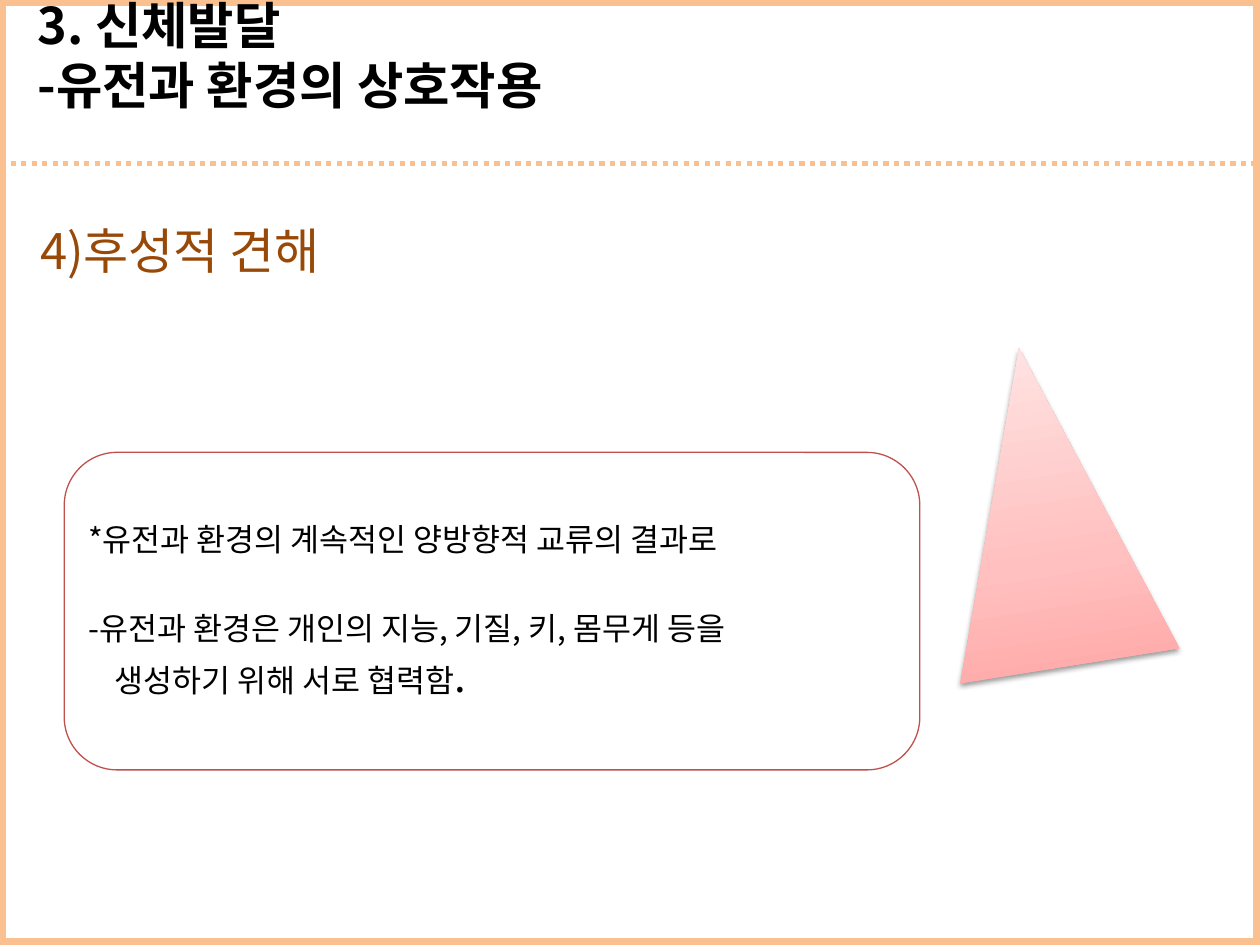
from copy import deepcopy
from dataclasses import dataclass

from lxml import etree
from pptx import Presentation
from pptx.dml.color import RGBColor
from pptx.enum.dml import MSO_LINE
from pptx.enum.shapes import MSO_CONNECTOR, MSO_SHAPE
from pptx.enum.text import MSO_ANCHOR, PP_ALIGN
from pptx.oxml.ns import qn
from pptx.util import Inches, Pt

FRAME = MSO_SHAPE.FRAME
ROUND = MSO_SHAPE.ROUNDED_RECTANGLE
CONE = MSO_SHAPE.ISOSCELES_TRIANGLE
STRAIGHT = MSO_CONNECTOR.STRAIGHT
DOTS = MSO_LINE.ROUND_DOT
TOP, MIDDLE = MSO_ANCHOR.TOP, MSO_ANCHOR.MIDDLE
LEFT, JUSTIFY = PP_ALIGN.LEFT, PP_ALIGN.JUSTIFY


@dataclass(frozen=True)
class Theme:
    font: str = "Noto Sans CJK KR"
    ink: str = "000000"
    brown: str = "984807"
    peach: str = "FAC090"
    red: str = "C0504D"
    white: str = "FFFFFF"
    blush: tuple = ((0, "FFA6A5"), (0.35, "FFC0BF"), (1, "FFE7E7"))
    title: float = 28.8
    head: float = 28
    body: float = 18
    stop: float = 24


THEME = Theme()


def rgb(code):
    return RGBColor.from_string(code)


def put(item, values):
    for name, value in values.items():
        setattr(item, name, value)


def add_sub(parent, tag, **values):
    return etree.SubElement(parent, qn(tag), {k: str(v) for k, v in values.items()})


def add_shape(slide, kind, box, fill=None, line=None, width=1):
    shape = slide.shapes.add_shape(kind, *map(Inches, box))
    shape.shadow.inherit = False
    if fill:
        shape.fill.solid()
        shape.fill.fore_color.rgb = rgb(fill)
    if line:
        shape.line.color.rgb = rgb(line)
        shape.line.width = Pt(width)
    else:
        shape.line.fill.background()
    return shape


def add_rule(slide, y):
    rule = slide.shapes.add_connector(
        STRAIGHT, Inches(0), Inches(y), Inches(10), Inches(y))
    rule.line.color.rgb = rgb(THEME.peach)
    put(rule.line, {"width": Pt(3), "dash_style": DOTS})
    add_sub(rule._element.spPr, "a:effectLst")


def add_cone(slide, box):
    """Triangle with a three-stop gradient and a soft shadow."""
    cone = add_shape(slide, CONE, box)
    cone.rotation = -9.1
    cone.fill.gradient()
    cone.fill.gradient_angle = 90
    stops = cone.fill._fill._gradFill.find(qn("a:gsLst"))
    stops.insert(1, deepcopy(stops[0]))
    for stop, (place, code) in zip(cone.fill.gradient_stops, THEME.blush):
        stop.position = place
        stop.color.rgb = rgb(code)
    effects = cone._element.spPr.find(qn("a:effectLst"))
    shade = add_sub(effects, "a:outerShdw", blurRad=Pt(3.1), dist=Pt(1.6),
                    dir=5400000, rotWithShape=0)
    color = add_sub(shade, "a:srgbClr", val=THEME.ink)
    add_sub(color, "a:alpha", val=38000)


def add_panel(slide, box):
    panel = add_shape(slide, ROUND, box, THEME.white, THEME.red, 0.75)
    color = panel._element.spPr.find(qn("a:solidFill"))[0]
    add_sub(color, "a:alpha", val=90000)


def add_run(para, text, size, color, bold=False):
    run = para.add_run()
    run.text = text
    put(run.font, {"name": THEME.font, "size": Pt(size), "bold": bold})
    run.font.color.rgb = rgb(color)
    add_sub(run._r.get_or_add_rPr(), "a:ea", typeface=THEME.font)


def add_text(slide, box, anchor, inset=(0.1, 0.05, 0.1, 0.05)):
    frame = slide.shapes.add_textbox(*map(Inches, box)).text_frame
    sides = ("margin_left", "margin_top", "margin_right", "margin_bottom")
    put(frame, dict(zip(sides, map(Inches, inset))))
    put(frame, {"word_wrap": True, "vertical_anchor": anchor})
    return frame


def add_para(frame, runs, color, pitch, after=0, align=LEFT, indent=0, bold=False):
    para = frame.paragraphs[0]
    if para.runs:
        para = frame.add_paragraph()
    put(para, {"alignment": align, "line_spacing": Pt(pitch),
               "space_before": Pt(0), "space_after": Pt(after)})
    if indent:
        para._p.get_or_add_pPr().set("marL", str(Inches(indent)))
    for text, size in runs:
        add_run(para, text, size, color, bold)


def main():
    deck = Presentation()
    put(deck, {"slide_width": Inches(10), "slide_height": Inches(7.5)})
    slide = deck.slides.add_slide(deck.slide_layouts[6])

    border = add_shape(slide, FRAME, (0, 0, 10, 7.5), THEME.peach, THEME.peach, 2)
    border.adjustments[0] = 0.005
    add_rule(slide, 1.3)

    title = add_text(slide, (0.2, 0.21, 9.61, 0.93), MIDDLE, (0.1, 0.05, 0.1, 0.53))
    for text in ("3. 신체발달", "-유전과 환경의 상호작용"):
        add_para(title, [(text, THEME.title)], THEME.ink, 34.3, bold=True)

    head = add_text(slide, (0.22, 1.47, 9.58, 5.83), TOP)
    add_para(head, [("4)후성적 견해", THEME.head)], THEME.brown, 50)

    add_cone(slide, (7.41, 2.75, 1.76, 2.55))
    add_panel(slide, (0.51, 3.59, 6.79, 2.52))
    note = add_text(slide, (0.63, 3.72, 6.54, 2.28), MIDDLE, (0.07,) * 4)
    size = THEME.body
    lines = (
        ([("*유전과 환경의 계속적인 양방향적 교류의 결과로", size)], 19.4, 32, 0),
        ([("-유전과 환경은 개인의 지능, 기질, 키, 몸무게 등을", size)], 19.4, 6.3, 0),
        ([("생성하기 위해 서로 협력함", size), (".", THEME.stop)], 24.6, 6.3, 0.21),
    )
    for runs, pitch, after, indent in lines:
        add_para(note, runs, THEME.ink, pitch, after, JUSTIFY, indent)

    deck.save("out.pptx")


if __name__ == "__main__":
    main()
